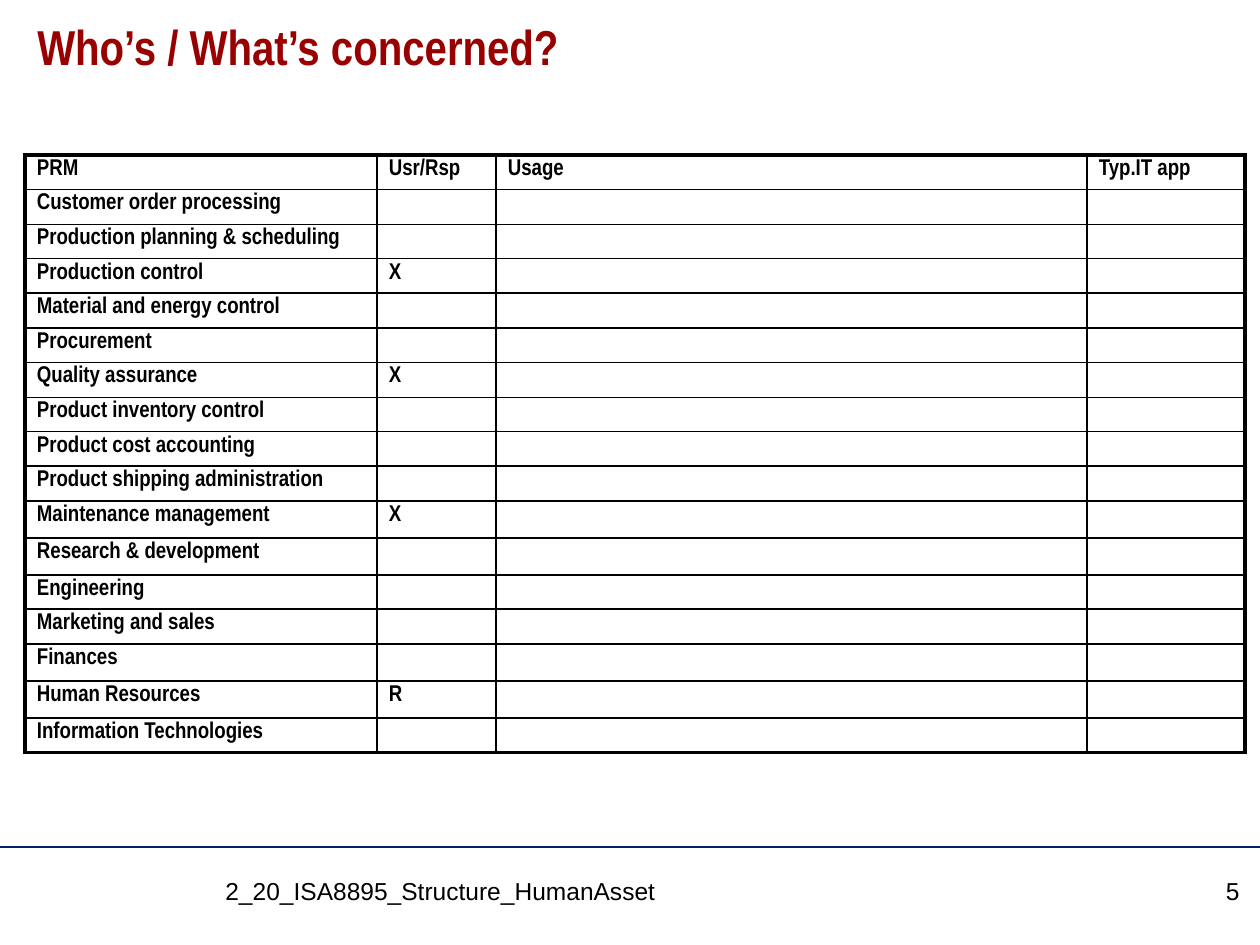
from itertools import pairwise

from lxml.etree import SubElement
from pptx import Presentation
from pptx.dml.color import RGBColor
from pptx.enum.shapes import MSO_CONNECTOR as CONN
from pptx.enum.text import MSO_ANCHOR as ANCHOR, PP_ALIGN as ALIGN
from pptx.oxml.ns import qn
from pptx.util import Pt

PX = 914400 // 126
BLACK = RGBColor(0x00, 0x00, 0x00)
INK = RGBColor(0x01, 0x00, 0x00)
RED = RGBColor(0x99, 0x00, 0x00)
NAVY = RGBColor(0x00, 0x20, 0x60)
NARROW = "Arial Narrow"
CELL_PT = 13
THIN, THICK = 1, 2.25

HEADER = ["PRM", "Usr/Rsp", "Usage", "Typ.IT app"]
FUNCTIONS = [
    "Customer order processing",
    "Production planning & scheduling",
    "Production control",
    "Material and energy control",
    "Procurement",
    "Quality assurance",
    "Product inventory control",
    "Product cost accounting",
    "Product shipping administration",
    "Maintenance management",
    "Research & development",
    "Engineering",
    "Marketing and sales",
    "Finances",
    "Human Resources",
    "Information Technologies",
]
ROLES = {
    "Production control": "X",
    "Quality assurance": "X",
    "Maintenance management": "X",
    "Human Resources": "R",
}
COL_EDGES = [0, 352, 471, 1062, 1220]
ROW_EDGES = [0, 34, 69, 103, 137, 172, 206, 241, 275, 309, 344, 381, 418, 452, 487, 524, 561, 595]


def px(*values):
    return [v * PX for v in values]


def set_font(p, name, size, color, bold=False):
    p.font.name = name
    p.font.size = Pt(size)
    p.font.bold = bold
    p.font.color.rgb = color


def add_text(slide, box, text, name, size, color, bold=False, align=ALIGN.LEFT):
    sp = slide.shapes.add_textbox(*px(*box))
    tf = sp.text_frame
    tf.word_wrap = True
    tf.vertical_anchor = ANCHOR.TOP
    p = tf.paragraphs[0]
    p.text = text
    p.alignment = align
    set_font(p, name, size, color, bold)
    return p


def add_title(slide, box):
    add_text(slide, box, "Who’s / What’s concerned?", NARROW, 28, RED, True)


def set_border(cell, side, width):
    ln = SubElement(cell._tc.get_or_add_tcPr(), qn(f"a:ln{side}"), w=str(Pt(width)))
    fill = SubElement(ln, qn("a:solidFill"))
    SubElement(fill, qn("a:srgbClr"), val=str(BLACK))


def fill_cell(cell, text, outer):
    cell.margin_left, cell.margin_right, cell.margin_top, cell.margin_bottom = px(12, 12, 4, 3)
    p = cell.text_frame.paragraphs[0]
    p.text = text
    set_font(p, NARROW, CELL_PT, INK, True)
    if not text:
        SubElement(p._p, qn("a:endParaRPr"), sz=str(CELL_PT * 100))
    for side in "LRTB":
        set_border(cell, side, THICK if side in outer else THIN)
    cell.fill.background()


def add_functions_table(slide, box):
    rows = [HEADER] + [[name, ROLES.get(name, ""), "", ""] for name in FUNCTIONS]
    last_row, last_col = len(rows) - 1, len(HEADER) - 1
    table = slide.shapes.add_table(len(rows), len(HEADER), *px(*box)).table
    table.first_row = table.horz_banding = False
    for col, (a, b) in zip(table.columns, pairwise(COL_EDGES)):
        col.width = (b - a) * PX
    for row, (a, b) in zip(table.rows, pairwise(ROW_EDGES)):
        row.height = (b - a) * PX
    for i, texts in enumerate(rows):
        for j, text in enumerate(texts):
            edges = {"L": j == 0, "R": j == last_col, "T": i == 0, "B": i == last_row}
            fill_cell(table.cell(i, j), text, [side for side, on in edges.items() if on])


def add_footer(slide, box):
    x, y, w, h = box
    rule = slide.shapes.add_connector(CONN.STRAIGHT, *px(x, y, x + w, y))
    rule.line.color.rgb = NAVY
    rule.line.width = Pt(0.75)
    SubElement(rule._element.spPr, qn("a:effectLst"))
    add_text(slide, (x + 213, y + 23, 908, 57), "2_20_ISA8895_Structure_HumanAsset", "Arial", 14, BLACK)
    add_text(slide, (x + 1136, y + 23, 116, 57), "5", "Arial", 14, BLACK, align=ALIGN.RIGHT)


def main():
    prs = Presentation()
    prs.slide_width, prs.slide_height = px(1260, 945)
    slide = prs.slides.add_slide(prs.slide_layouts[6])
    add_title(slide, (25, 10, 1211, 105))
    add_functions_table(slide, (25, 155, COL_EDGES[-1], ROW_EDGES[-1]))
    add_footer(slide, (0, 847, 1260, 98))
    prs.save("out.pptx")


if __name__ == "__main__":
    main()
